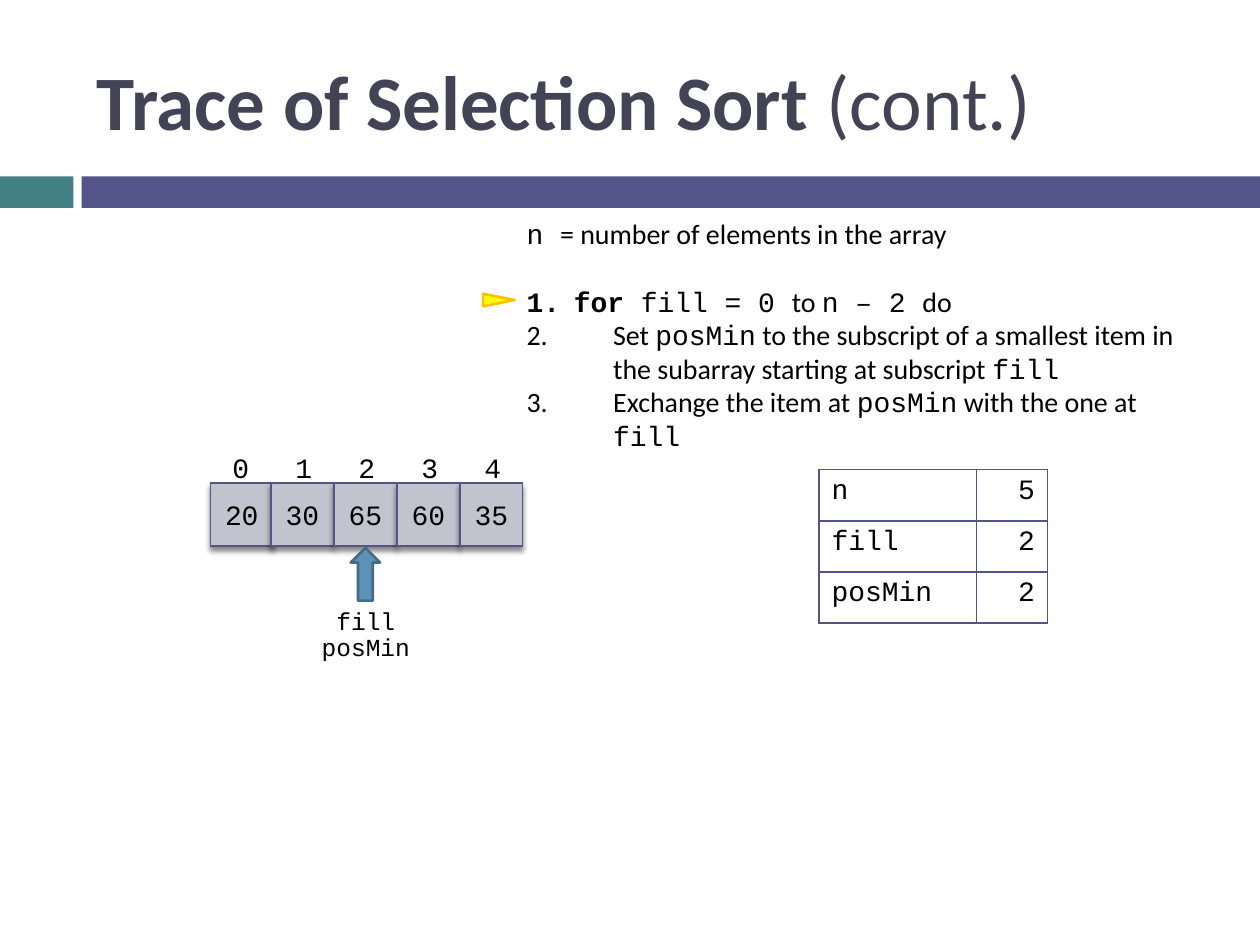
from dataclasses import dataclass

from lxml import etree
from pptx import Presentation
from pptx.dml.color import RGBColor
from pptx.enum import shapes, text
from pptx.oxml import ns
from pptx.util import Pt

SANS, MONO = "Calibri", "Courier New"
INDIGO, TEAL, BLACK = "53548A", "438086", "000000"
LEFT, CENTER, RIGHT = text.PP_ALIGN.LEFT, text.PP_ALIGN.CENTER, text.PP_ALIGN.RIGHT


@dataclass
class Box:
    left: float
    top: float
    width: float
    height: float

    def lengths(self):
        return [Pt(v) for v in (self.left, self.top, self.width, self.height)]


@dataclass
class Element:
    """An array element: its left edge and its value."""
    left: float
    value: str


@dataclass
class Step:
    """A numbered step: its hanging indent and its (text, font, bold) runs."""
    indent: float
    runs: list
    space_before: float = 0


ELEMENTS = [Element(120.2, "20"), Element(154.8, "30"), Element(190.8, "65"),
            Element(226.8, "60"), Element(262.8, "35")]
VARIABLES = [("n", "5"), ("fill", "2"), ("posMin", "2")]
STEPS = [
    Step(27, [("for", MONO, True), (" fill = 0 ", MONO, False), ("to ", SANS, False),
              ("n – 2 ", MONO, False), ("do", SANS, False)], space_before=19.5),
    Step(49.5, [("Set ", SANS, False), ("posMin", MONO, False),
                (" to the subscript of a smallest item in the subarray starting at subscript ",
                 SANS, False), ("fill", MONO, False)]),
    Step(49.5, [("Exchange the item at ", SANS, False), ("posMin", MONO, False),
                (" with the one at ", SANS, False), ("fill", MONO, False)]),
]


def rgb(color: str) -> RGBColor:
    return RGBColor.from_string(color)


def add_run(paragraph, words: str, *, font=MONO, size=16, bold=False, color=BLACK, align=LEFT):
    paragraph.alignment = align
    run = paragraph.add_run()
    run.text = words
    run.font.name, run.font.size, run.font.bold = font, Pt(size), bold
    run.font.color.rgb = rgb(color)


def add_shape(slide, kind, box: Box, fill: str, line="", line_width=1.5, rotation=0):
    shape = slide.shapes.add_shape(kind, *box.lengths())
    shape.shadow.inherit = False
    shape.rotation = rotation
    shape.fill.solid()
    shape.fill.fore_color.rgb = rgb(fill)
    if line:
        shape.line.color.rgb = rgb(line)
        shape.line.width = Pt(line_width)
    else:
        shape.line.fill.background()
    return shape


def add_text_frame(slide, box: Box):
    frame = slide.shapes.add_textbox(*box.lengths()).text_frame
    frame.word_wrap = True
    return frame


def add_label(slide, box: Box, words: str, size: float):
    add_run(add_text_frame(slide, box).paragraphs[0], words, size=size, align=CENTER)


def add_drop_shadow(shape):
    effects = shape._element.spPr.find(ns.qn("a:effectLst"))
    shadow = etree.SubElement(effects, ns.qn("a:outerShdw"), blurRad=str(Pt(3)),
                              dist=str(Pt(2.4)), dir="5400000", rotWithShape="0")
    color = etree.SubElement(shadow, ns.qn("a:srgbClr"), val=BLACK)
    etree.SubElement(color, ns.qn("a:alpha"), val="45000")


def add_title(slide):
    title = slide.shapes.title
    title.left, title.top, title.width, title.height = Box(48.2, 18, 642.2, 77.8).lengths()
    title.text_frame.vertical_anchor = text.MSO_ANCHOR.MIDDLE
    for words, bold in (("Trace of Selection Sort ", True), ("(cont.)", False)):
        add_run(title.text_frame.paragraphs[0], words, font=SANS, size=44,
                bold=bold, color="424456")


def add_algorithm(slide):
    frame = add_text_frame(slide, Box(293.8, 120.2, 401.8, 123.8))
    definition = frame.paragraphs[0]
    add_run(definition, "n ")
    add_run(definition, "= number of elements in the array", font=SANS)
    for step in STEPS:
        paragraph = frame.add_paragraph()
        paragraph.space_before = Pt(step.space_before)
        for words, font, bold in step.runs:
            add_run(paragraph, words, font=font, bold=bold)
        properties = paragraph._p.get_or_add_pPr()
        properties.set("marL", str(Pt(step.indent)))
        properties.set("indent", str(-Pt(step.indent)))
        etree.SubElement(properties, ns.qn("a:buFont"), typeface="+mj-lt")
        etree.SubElement(properties, ns.qn("a:buAutoNum"), type="arabicPeriod")


def add_array(slide):
    for index, element in enumerate(ELEMENTS):
        square = add_shape(slide, shapes.MSO_SHAPE.RECTANGLE,
                           Box(element.left, 276, 36, 36), "C3C3CF", INDIGO, 0.79)
        add_drop_shadow(square)
        square.text_frame.vertical_anchor = text.MSO_ANCHOR.MIDDLE
        add_run(square.text_frame.paragraphs[0], element.value, align=CENTER)
        add_label(slide, Box(120.2 + 36 * index, 254.2, 34.6, 26.6), str(index), 16)


def add_variables(slide):
    table = slide.shapes.add_table(len(VARIABLES), 2, *Box(468, 268.4, 130.5, 87.6).lengths()).table
    table.first_row = table.horz_banding = False
    for column, width in zip(table.columns, (90, 40.5)):
        column.width = Pt(width)
    for row, values in enumerate(VARIABLES):
        for column, (value, align) in enumerate(zip(values, (LEFT, RIGHT))):
            cell = table.cell(row, column)
            add_run(cell.text_frame.paragraphs[0], value, align=align)
            properties = cell._tc.get_or_add_tcPr()
            for side in ("lnL", "lnR", "lnT", "lnB"):
                border = etree.SubElement(properties, ns.qn(f"a:{side}"), w=str(Pt(1)))
                fill = etree.SubElement(border, ns.qn("a:solidFill"))
                etree.SubElement(fill, ns.qn("a:srgbClr"), val=INDIGO)
            cell.fill.background()


def main():
    deck = Presentation()
    deck.slide_width, deck.slide_height = Pt(720), Pt(540)
    slide = deck.slides.add_slide(deck.slide_layouts[5])
    kinds = shapes.MSO_SHAPE
    add_shape(slide, kinds.RECTANGLE, Box(0, 100.8, 42, 18), TEAL)
    add_shape(slide, kinds.RECTANGLE, Box(46.6, 100.8, 673.4, 18), INDIGO)
    add_title(slide)
    add_algorithm(slide)
    add_array(slide)
    add_variables(slide)
    add_shape(slide, kinds.DOWN_ARROW, Box(200.4, 313, 16.8, 30.2), "5C92B5", "446C86",
              rotation=180)
    for name, top in (("fill", 342.7), ("posMin", 357.8)):
        add_label(slide, Box(170.6, top, 77, 24.5), name, 14)
    add_shape(slide, kinds.ISOSCELES_TRIANGLE, Box(281.5, 162.5, 7.2, 18), "FFFF00", "FFC000",
              rotation=90)
    deck.save("out.pptx")


if __name__ == "__main__":
    main()
